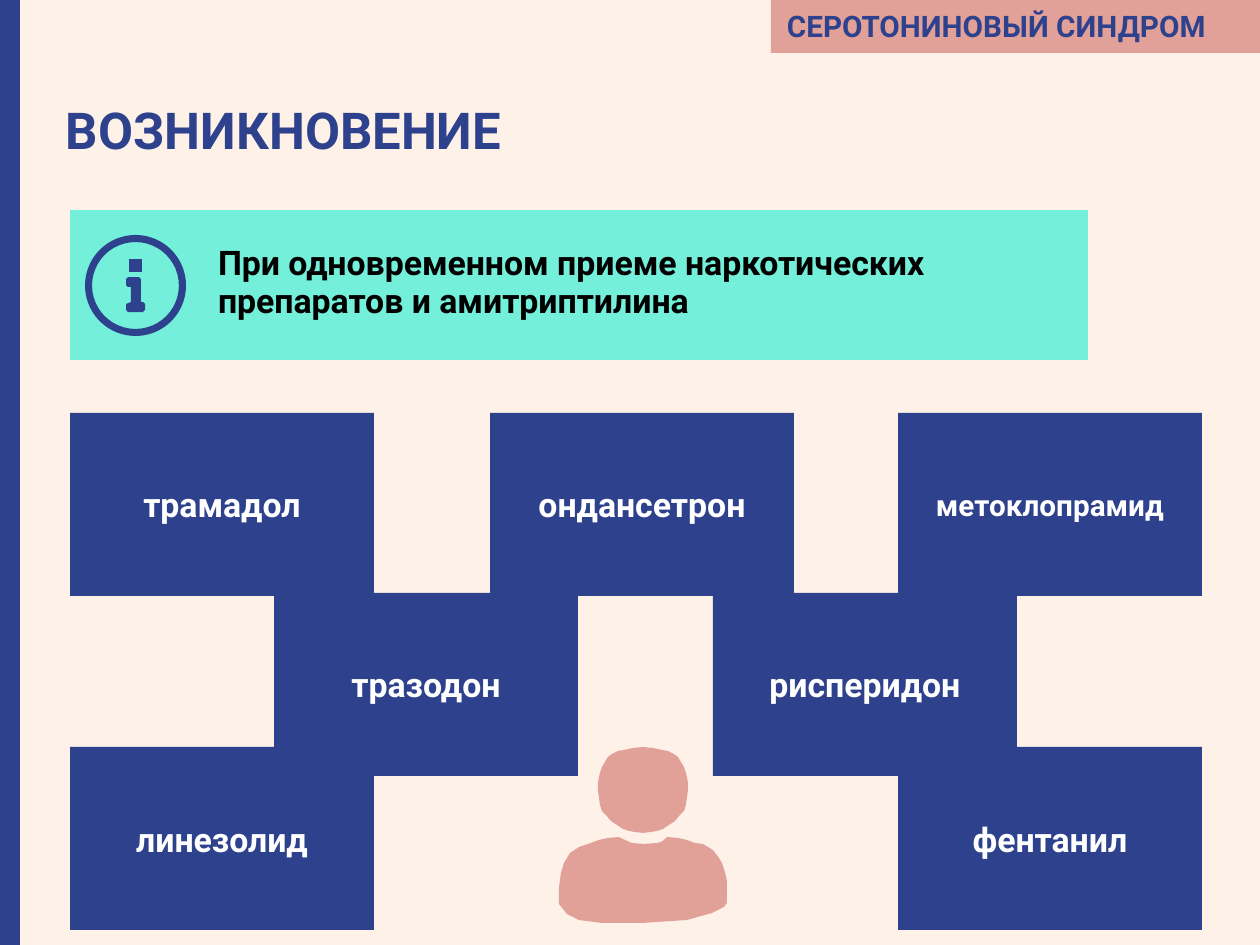
from pptx import Presentation
from pptx.dml.color import RGBColor
from pptx.enum.shapes import MSO_SHAPE
from pptx.enum.text import MSO_ANCHOR, MSO_AUTO_SIZE, PP_ALIGN
from pptx.util import Pt
from lxml import etree

PX = 6000  # EMU per px
CREAM = RGBColor(0xFE, 0xF1, 0xE8)
NAVY = RGBColor(0x2E, 0x41, 0x8D)
ROSE = RGBColor(0xE1, 0xA1, 0x98)
MINT = RGBColor(0x73, 0xEF, 0xDA)
BLACK = RGBColor(0, 0, 0)
WHITE = RGBColor(0xFF, 0xFF, 0xFF)
RECT, DONUT = MSO_SHAPE.RECTANGLE, MSO_SHAPE.DONUT
LEFT, CENTER = PP_ALIGN.LEFT, PP_ALIGN.CENTER
TOP, MIDDLE = MSO_ANCHOR.TOP, MSO_ANCHOR.MIDDLE
FIXED = MSO_AUTO_SIZE.NONE
BARE = etree.QName(
    "http://schemas.openxmlformats.org/drawingml/2006/main", "buNone")


def apply(item, values):
    for name, value in values.items():
        setattr(item, name, value)


class Deck:
    font = "Roboto"

    def __init__(self, width, height, back):
        self.file = Presentation()
        apply(self.file, {"slide_width": width * PX,
                          "slide_height": height * PX})
        self.slide = self.file.slides.add_slide(self.file.slide_layouts[1])
        self.slide.background.fill.solid()
        self.slide.background.fill.fore_color.rgb = back

    def paint(self, shape, color):
        shape.shadow.inherit = False
        shape.fill.solid()
        shape.fill.fore_color.rgb = color
        shape.line.fill.background()
        return shape

    def shape(self, kind, box, color):
        item = self.slide.shapes.add_shape(kind, *(n * PX for n in box))
        return self.paint(item, color)

    def outline(self, points, color):
        form = self.slide.shapes.build_freeform(*points[0], scale=PX)
        form.add_line_segments(points[1:], close=True)
        return self.paint(form.convert_to_shape(), color)

    def label(self, shape, words, size, color, align=CENTER, anchor=MIDDLE,
              inset=(15, 8, 15, 8), lines=1.0):
        frame = shape.text_frame
        frame.text = words
        sides = ("margin_left", "margin_top", "margin_right", "margin_bottom")
        apply(frame, {side: n * PX for side, n in zip(sides, inset)})
        apply(frame, {"word_wrap": True, "auto_size": FIXED,
                      "vertical_anchor": anchor})
        para = frame.paragraphs[0]
        apply(para, {"alignment": align, "line_spacing": lines,
                     "space_before": Pt(0)})
        run = para.runs[0].font
        apply(run, {"name": self.font, "size": Pt(size), "bold": True})
        run.color.rgb = color
        return para

    def holder(self, index, box, words, size, color, inset):
        item = self.slide.placeholders[index]
        names = ("left", "top", "width", "height")
        apply(item, {name: n * PX for name, n in zip(names, box)})
        para = self.label(item, words, size, color, LEFT, TOP, inset, 0.93)
        props = para._p.get_or_add_pPr()
        props.set("marL", "0")
        props.set("indent", "0")
        etree.SubElement(props, BARE)
        return item


def main():
    deck = Deck(1260, 945, CREAM)

    # Title and key statement
    deck.holder(0, (37, 96, 523, 73), "ВОЗНИКНОВЕНИЕ", 24, NAVY,
                (29, 8, 15, 8))
    note = deck.holder(
        1, (70, 210, 1018, 150),
        "При одновременном приеме наркотических препаратов и амитриптилина",
        16, BLACK, (148, 35, 12, 8))
    deck.paint(note, MINT)

    # Side stripe and header tag
    deck.shape(RECT, (0, 0, 20, 945), NAVY)
    tag = deck.shape(RECT, (771, 0, 489, 53), ROSE)
    deck.label(tag, "СЕРОТОНИНОВЫЙ СИНДРОМ", 14, NAVY, LEFT,
               inset=(16, 3, 0, 0), lines=0.93)

    # Info icon
    ring = deck.shape(DONUT, (85, 235, 101, 101), NAVY)
    ring.adjustments[0] = 0.07
    deck.shape(RECT, (129, 259, 13, 13), NAVY)
    deck.outline([(128, 277), (139, 277), (141, 279), (141, 302), (143, 302),
                  (145, 304), (145, 310), (143, 312), (128, 312), (126, 310),
                  (126, 304), (131, 302), (131, 287), (128, 287), (126, 285),
                  (126, 279)], NAVY)

    # Drug boxes: top, middle and bottom rows
    rows = [
        (413, [(70, "трамадол", 16), (490, "ондансетрон", 16),
               (898, "метоклопрамид", 14)]),
        (593, [(274, "тразодон", 16), (713, "рисперидон", 16)]),
        (747, [(70, "линезолид", 16), (898, "фентанил", 16)]),
    ]
    for top, drugs in rows:
        for left, drug, size in drugs:
            box = deck.shape(RECT, (left, top, 304, 183), NAVY)
            deck.label(box, drug, size, WHITE)

    # Person: the head mirrors one half about its axis
    axis = 643
    half = [(0, 747), (10, 748), (19, 750), (25, 751), (31, 754), (35, 757),
            (38, 762), (41, 767), (43, 773), (44, 777), (45, 783), (45, 791),
            (44, 797), (43, 805), (41, 811), (37, 815), (32, 821), (26, 825),
            (20, 829), (14, 831), (8, 832), (0, 833)]
    deck.outline([(axis + x, y) for x, y in half]
                 + [(axis - x, y) for x, y in half[-2:0:-1]], ROSE)
    deck.outline([(619, 837), (608, 838), (599, 840), (591, 843), (579, 847),
                  (570, 853), (564, 863), (561, 873), (559, 888), (559, 904),
                  (567, 914), (579, 920), (602, 923), (643, 923), (687, 920),
                  (712, 913), (724, 907), (727, 903), (727, 881), (725, 872),
                  (722, 863), (719, 858), (713, 850), (703, 844), (695, 843),
                  (687, 840), (678, 838), (667, 837), (663, 841), (658, 843),
                  (643, 844), (632, 843), (625, 840)], ROSE)

    deck.file.save("out.pptx")


if __name__ == "__main__":
    main()
